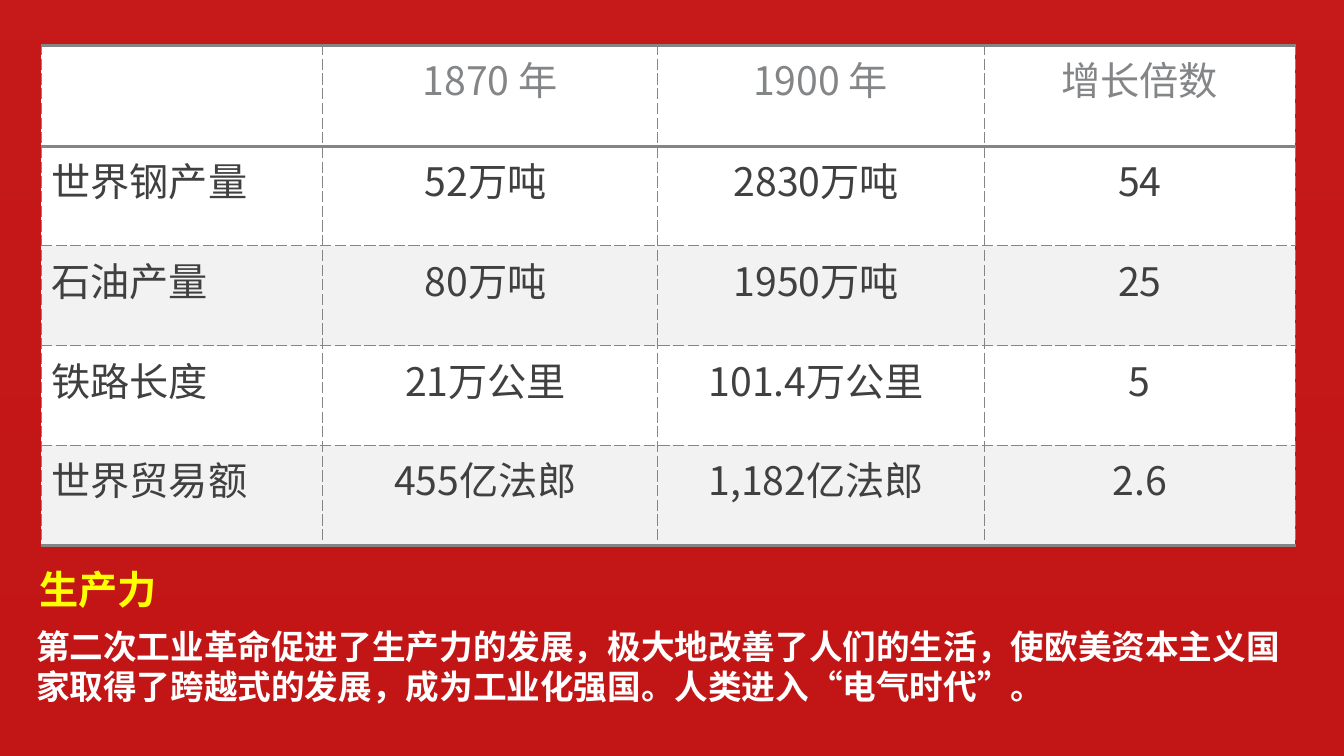
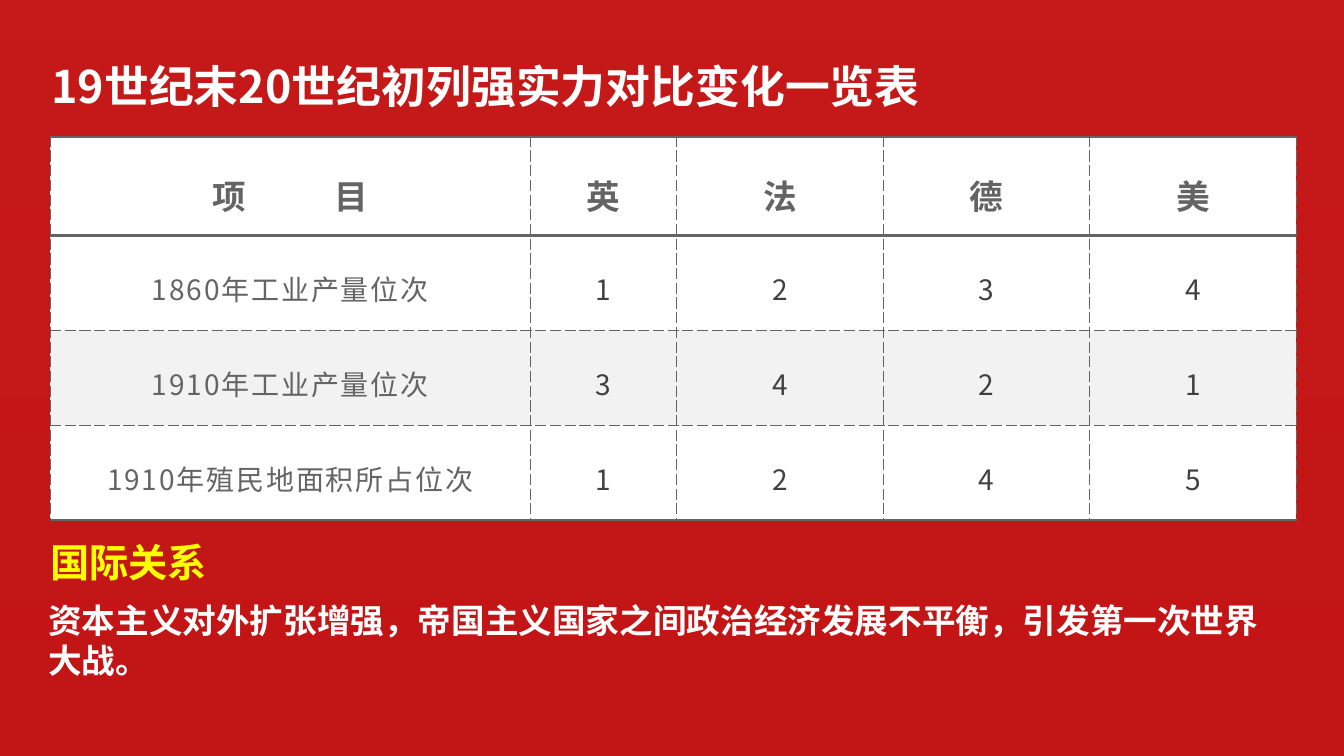
"""Build two slides on the second industrial revolution's effects."""
from dataclasses import dataclass
from typing import Optional

from lxml.etree import SubElement
from pptx import Presentation
from pptx.dml.color import RGBColor
from pptx.enum.shapes import MSO_SHAPE
from pptx.enum.text import MSO_ANCHOR, MSO_AUTO_SIZE, PP_ALIGN
from pptx.oxml.ns import qn
from pptx.util import Inches, Pt

FONT = "Noto Sans CJK SC"
WHITE = RGBColor(0xFF, 0xFF, 0xFF)
SILVER = RGBColor(0xD9, 0xD9, 0xD9)
BAND = RGBColor(0xF2, 0xF2, 0xF2)
RED = RGBColor(0xC0, 0x00, 0x00)
YELLOW = RGBColor(0xFF, 0xFF, 0x00)
INK = RGBColor(0x40, 0x40, 0x40)
GREY = RGBColor(0x84, 0x85, 0x87)
DARK_GREY = RGBColor(0x64, 0x64, 0x64)
THICK, THIN = Pt(2.25), Pt(0.75)


@dataclass(frozen=True)
class TextStyle:
    """Look of a paragraph; spacing is in points."""
    size: float
    color: RGBColor
    bold: bool = False
    align: PP_ALIGN = PP_ALIGN.LEFT
    line_spacing: Optional[float] = None
    spacing: float = 0


@dataclass(frozen=True)
class Box:
    """Place on the slide, in inches."""
    left: float
    top: float
    width: float
    height: float


@dataclass(frozen=True)
class TableDesign:
    """Grid sizes in inches, line colour and text styles of a table."""
    left: float
    top: float
    columns: tuple[float, ...]
    header_height: float
    row_height: float
    line: RGBColor
    header: TextStyle
    label: TextStyle
    value: TextStyle
    margins: tuple[float, float] = (0.1, 0.05)
    anchor: MSO_ANCHOR = MSO_ANCHOR.TOP


TITLE = TextStyle(32, WHITE, True)
HEADING = TextStyle(28, YELLOW, True)
BODY = TextStyle(24, WHITE, True)

GROWTH_DESIGN = TableDesign(
    0.41, 0.45, (2.79, 3.32, 3.24, 3.09), 1, 0.99, GREY,
    header=TextStyle(28, GREY, align=PP_ALIGN.CENTER),
    label=TextStyle(28, INK),
    value=TextStyle(28, INK, align=PP_ALIGN.CENTER),
)
GROWTH_ROWS = (
    ("", "1870 年", "1900 年", "增长倍数"),
    ("世界钢产量", "52万吨 ", "2830万吨 ", "54"),
    ("石油产量", "80万吨 ", "1950万吨 ", "25"),
    ("铁路长度", "21万公里 ", "101.4万公里 ", "5"),
    ("世界贸易额", "455亿法郎 ", "1,182亿法郎 ", "2.6"),
)
RANK_DESIGN = TableDesign(
    0.5, 1.36, (4.76, 1.45, 2.05, 2.05, 2.05), 0.98, 0.94, DARK_GREY,
    header=TextStyle(24, DARK_GREY, True, PP_ALIGN.CENTER, 1.2, 1.3),
    label=TextStyle(20, DARK_GREY, False, PP_ALIGN.CENTER, 1.2, 1.3),
    value=TextStyle(20, INK, False, PP_ALIGN.CENTER, 1.2, 1.3),
    margins=(0.35, 0.24),
    anchor=MSO_ANCHOR.MIDDLE,
)
RANK_ROWS = (
    ("项 ", "英", "法", "德", "美"),
    ("1860年工业产量位次", "1", "2", "3", "4"),
    ("1910年工业产量位次", "3", "4", "2", "1"),
    ("1910年殖民地面积所占位次", "1", "2", "4", "5"),
)


def write(frame, text: str, style: TextStyle) -> None:
    """Put one styled paragraph into a text frame."""
    frame.text = text
    paragraph = frame.paragraphs[0]
    paragraph.alignment = style.align
    if style.line_spacing:
        paragraph.line_spacing = style.line_spacing
    font = paragraph.font
    font.size, font.bold, font.name = Pt(style.size), style.bold, FONT
    font.color.rgb = style.color
    properties = paragraph._p.get_or_add_pPr().find(qn("a:defRPr"))
    SubElement(properties, qn("a:ea")).set("typeface", FONT)
    if style.spacing:
        properties.set("spc", str(round(style.spacing * 100)))


def place(shape, box: Box) -> None:
    """Move and size a shape."""
    shape.left, shape.top = Inches(box.left), Inches(box.top)
    shape.width, shape.height = Inches(box.width), Inches(box.height)


def set_background(prs) -> None:
    """Give every slide the same pale gradient through the master."""
    fill = prs.slide_master.background.fill
    fill.gradient()
    fill.gradient_angle = 270
    for stop, color in zip(fill.gradient_stops, (WHITE, SILVER)):
        stop.color.rgb = color


def add_red_slide(prs, layout_name: str):
    """Add a slide with a translucent red sheet behind its content."""
    slide = prs.slides.add_slide(prs.slide_layouts.get_by_name(layout_name))
    sheet = slide.shapes.add_shape(
        MSO_SHAPE.RECTANGLE, 0, 0, prs.slide_width, prs.slide_height)
    sheet.shadow.inherit = False
    sheet.line.fill.background()
    sheet.fill.solid()
    sheet.fill.fore_color.rgb = RED
    tint = sheet.element.spPr.find(f"{qn('a:solidFill')}/{qn('a:srgbClr')}")
    SubElement(tint, qn("a:alpha")).set("val", "90000")
    sheet.element.getparent().insert(2, sheet.element)
    return slide


def add_text(slide, box: Box, text: str, style: TextStyle, wrap: bool = True) -> None:
    """Add a text box."""
    textbox = slide.shapes.add_textbox(0, 0, 0, 0)
    place(textbox, box)
    frame = textbox.text_frame
    frame.word_wrap = wrap
    frame.auto_size = MSO_AUTO_SIZE.SHAPE_TO_FIT_TEXT
    write(frame, text, style)


def set_borders(cell, color: RGBColor, thick_top: bool, thick_bottom: bool) -> None:
    """Draw solid thick rules and dashed thin ones around a cell."""
    properties = cell._tc.get_or_add_tcPr()
    sides = (("lnL", False), ("lnR", False), ("lnT", thick_top), ("lnB", thick_bottom))
    for index, (side, thick) in enumerate(sides):
        line = SubElement(properties, qn(f"a:{side}"))
        line.set("w", str(THICK if thick else THIN))
        fill = SubElement(line, qn("a:solidFill"))
        SubElement(fill, qn("a:srgbClr")).set("val", str(color))
        SubElement(line, qn("a:prstDash")).set("val", "solid" if thick else "sysDash")
        properties.insert(index, line)


def add_data_table(slide, design: TableDesign, rows: tuple[tuple[str, ...], ...]):
    """Add a ruled table whose every second data row is shaded."""
    last = len(rows) - 1
    height = design.header_height + last * design.row_height
    table = slide.shapes.add_table(
        len(rows), len(design.columns), Inches(design.left), Inches(design.top),
        Inches(sum(design.columns)), Inches(height)).table
    table.first_row = table.horz_banding = False
    for column, width in zip(table.columns, design.columns):
        column.width = Inches(width)
    for row_index, texts in enumerate(rows):
        is_header = row_index == 0
        table.rows[row_index].height = Inches(
            design.header_height if is_header else design.row_height)
        for column_index, text in enumerate(texts):
            cell = table.cell(row_index, column_index)
            cell.margin_left = cell.margin_right = Inches(design.margins[0])
            cell.margin_top = cell.margin_bottom = Inches(design.margins[1])
            cell.vertical_anchor = design.anchor
            cell.fill.solid()
            shaded = not is_header and row_index % 2 == 0
            cell.fill.fore_color.rgb = BAND if shaded else WHITE
            set_borders(cell, design.line, row_index <= 1, row_index in (0, last))
            body_style = design.value if column_index else design.label
            write(cell.text_frame, text, design.header if is_header else body_style)
    return table


def add_conclusion(slide, heading_box: Box, heading: str, body_box: Box, body: str) -> None:
    """Add the yellow heading and the white statement under a table."""
    add_text(slide, heading_box, heading, HEADING, wrap=False)
    add_text(slide, body_box, body, BODY)


def build_productivity(prs) -> None:
    """Build the slide on growth in output."""
    slide = add_red_slide(prs, "Blank")
    add_data_table(slide, GROWTH_DESIGN, GROWTH_ROWS)
    add_conclusion(
        slide, Box(0.29, 5.56, 1.38, 0.57), "生产力", Box(0.26, 6.16, 12.59, 0.91),
        "第二次工业革命促进了生产力的发展，极大地改善了人们的生活，使欧美资本主义国家"
        "取得了跨越式的发展，成为工业化强国。人类进入“电气时代”。")


def build_relations(prs) -> None:
    """Build the slide on the changing rank of the powers."""
    slide = add_red_slide(prs, "Title Only")
    title = slide.shapes.title
    place(title, Box(0.41, 0.53, 9.37, 0.64))
    title.text_frame.vertical_anchor = MSO_ANCHOR.TOP
    title.text_frame.auto_size = MSO_AUTO_SIZE.SHAPE_TO_FIT_TEXT
    write(title.text_frame, "19世纪末20世纪初列强实力对比变化一览表", TITLE)
    table = add_data_table(slide, RANK_DESIGN, RANK_ROWS)
    item_header = table.cell(0, 0).text_frame.paragraphs[0]
    item_header.runs[0]._r.get_or_add_rPr().set("spc", "2880")
    item_header.add_run().text = "目"
    add_conclusion(
        slide, Box(0.4, 5.29, 1.76, 0.57), "国际关系", Box(0.38, 5.9, 12.33, 0.91),
        "资本主义对外扩张增强，帝国主义国家之间政治经济发展不平衡，引发第一次世界大战。")


def main() -> None:
    """Build and save the presentation."""
    prs = Presentation()
    prs.slide_width, prs.slide_height = Inches(13.33), Inches(7.5)
    set_background(prs)
    build_productivity(prs)
    build_relations(prs)
    prs.save("out.pptx")


if __name__ == "__main__":
    main()
